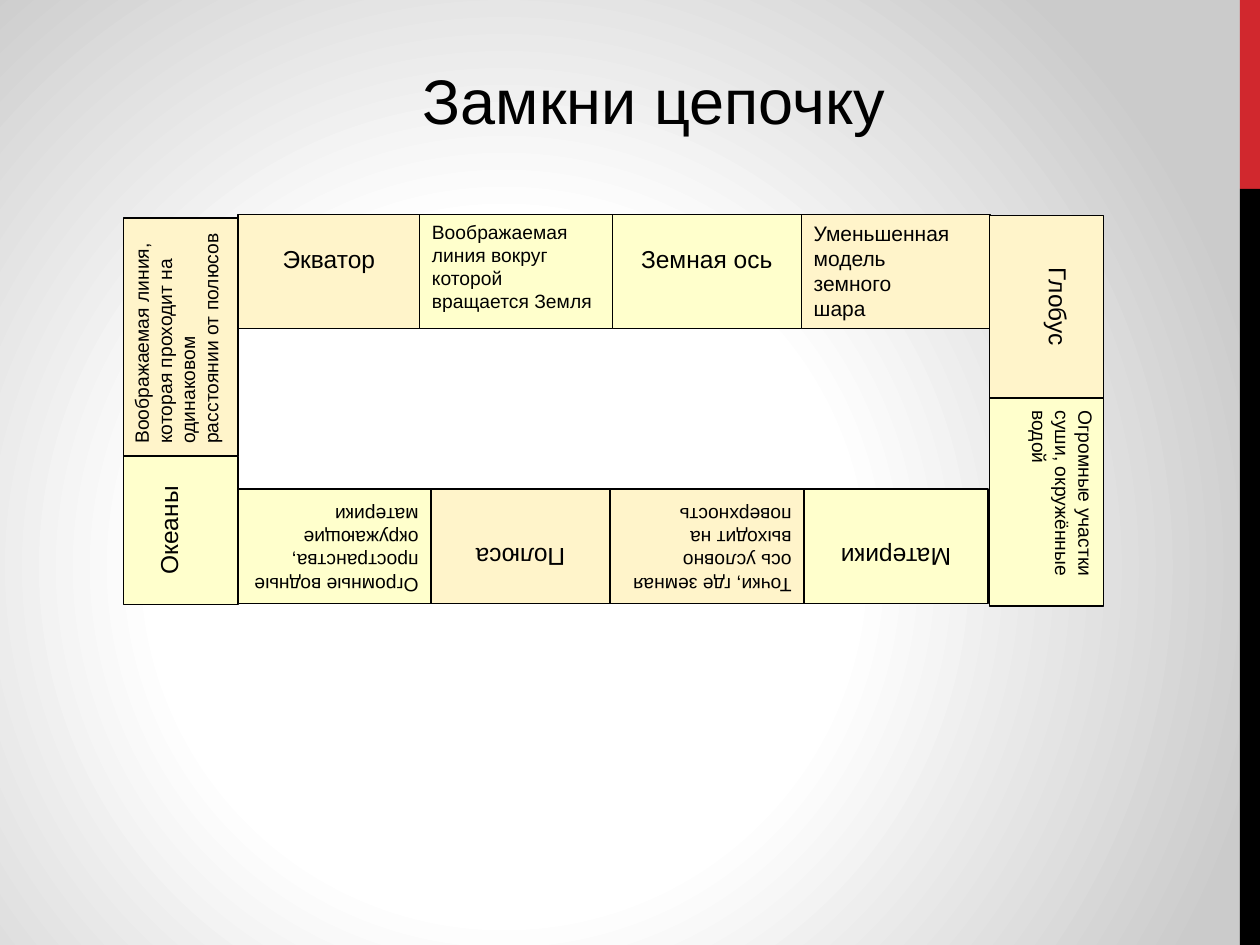
from dataclasses import dataclass

from pptx import Presentation
from pptx.dml.color import RGBColor as Rgb
from pptx.enum.shapes import MSO_SHAPE as Shape
from pptx.enum.text import MSO_ANCHOR as Anchor, PP_ALIGN as Align
from pptx.oxml import parse_xml
from pptx.util import Inches, Pt

COLORS = {
    "black": "000000", "red": "D1282E", "white": "FFFFFF", "grey": "CBCBCB",
    "lemon": "FFFFCC", "peach": "FFF4CA",
}
FONT = "Arial"
DEPTH = 0.91  # short side of every card
NS = ('xmlns:p="http://schemas.openxmlformats.org/presentationml/2006/main" '
      'xmlns:a="http://schemas.openxmlformats.org/drawingml/2006/main"')


@dataclass
class Card:
    text: str
    width: float
    color: str
    size: int = 11
    term: bool = False


@dataclass
class Side:
    left: float
    top: float
    turn: int
    cards: list[Card]


def term(text: str, width: float, color: str) -> Card:
    return Card(text, width, color, 14, True)


# Each side lists its cards from left to right or from top to bottom
SIDES = [
    Side(1.89, 1.7, 0, [
        term("Экватор", 1.44, "peach"),
        Card("Воображаемая линия вокруг которой вращается Земля", 1.53, "lemon"),
        term("Земная ось", 1.5, "lemon"),
        Card("Уменьшенная\nмодель\nземного\nшара", 1.5, "peach", 12),
    ]),
    Side(0.98, 1.73, 270, [
        Card("Воображаемая линия, которая проходит на одинаковом "
             "расстоянии от полюсов", 1.89, "peach"),
        term("Океаны", 1.18, "lemon"),
    ]),
    Side(7.85, 1.71, 90, [
        term("Глобус", 1.45, "peach"),
        Card("Огромные участки суши, окружённые водой", 1.65, "lemon"),
    ]),
    Side(1.89, 3.88, 180, [
        Card("Огромные водные пространства, окружающие материки", 1.53, "lemon"),
        term("Полюса", 1.42, "peach"),
        Card("Точки, где земная ось условно выходит на поверхность", 1.54, "peach"),
        term("Материки", 1.46, "lemon"),
    ]),
]


def paint(slide) -> None:
    """Give the slide its round white-to-grey background."""
    stops = "".join(
        f'<a:gs pos="{pos * 1000}"><a:srgbClr val="{COLORS[name]}"/></a:gs>'
        for pos, name in ((0, "white"), (44, "white"), (100, "grey")))
    slide.element.cSld.insert(0, parse_xml(
        f'<p:bg {NS}><p:bgPr><a:gradFill rotWithShape="1"><a:gsLst>{stops}</a:gsLst>'
        '<a:path path="circle"><a:fillToRect l="40000" t="60000" r="60000" b="40000"/>'
        '</a:path></a:gradFill><a:effectLst/></p:bgPr></p:bg>'))


def add_rect(slide, left: float, top: float, width: float, height: float, color: str):
    rect = slide.shapes.add_shape(
        Shape.RECTANGLE, Inches(left), Inches(top), Inches(width), Inches(height))
    rect.shadow.inherit = False
    rect.fill.solid()
    rect.fill.fore_color.rgb = Rgb.from_string(COLORS[color])
    rect.line.fill.background()
    return rect


def write(frame, text: str, size: int, align: Align) -> None:
    frame.text = text
    frame.word_wrap = True
    frame.vertical_anchor = Anchor.TOP
    for para in frame.paragraphs:
        para.alignment = align
        for run in para.runs:
            run.font.name = FONT
            run.font.size = Pt(size)
            run.font.color.rgb = Rgb.from_string(COLORS["black"])


def add_card(slide, card: Card, left: float, top: float, turn: int) -> None:
    rect = add_rect(slide, left, top, card.width, DEPTH, card.color)
    rect.rotation = turn
    rect.line.color.rgb = Rgb.from_string(COLORS["black"])
    rect.line.width = Pt(0.75)
    write(rect.text_frame, card.text, card.size,
          Align.CENTER if card.term else Align.LEFT)
    if card.term:
        rect.text_frame.margin_top = Inches(0.24)


def add_side(slide, side: Side) -> None:
    left, top = side.left, side.top
    for card in side.cards:
        if side.turn in (90, 270):
            # A quarter turn keeps the centre of the card in place
            shift = (card.width - DEPTH) / 2
            add_card(slide, card, left - shift, top + shift, side.turn)
            top += card.width
        else:
            add_card(slide, card, left, top, side.turn)
            left += card.width


def main() -> None:
    deck = Presentation()
    deck.slide_width, deck.slide_height = Inches(10), Inches(7.5)
    slide = deck.slides.add_slide(deck.slide_layouts[6])
    paint(slide)

    # Edge stripe
    add_rect(slide, 9.84, 0, 0.16, 1.5, "red")
    add_rect(slide, 9.84, 1.5, 0.16, 6, "black")

    # Chain of cards
    for side in SIDES:
        add_side(slide, side)

    # Title
    title = slide.shapes.add_textbox(Inches(2.55), Inches(0.44), Inches(5.28), Inches(0.71))
    write(title.text_frame, "Замкни цепочку", 36, Align.CENTER)

    deck.save("out.pptx")


if __name__ == "__main__":
    main()
